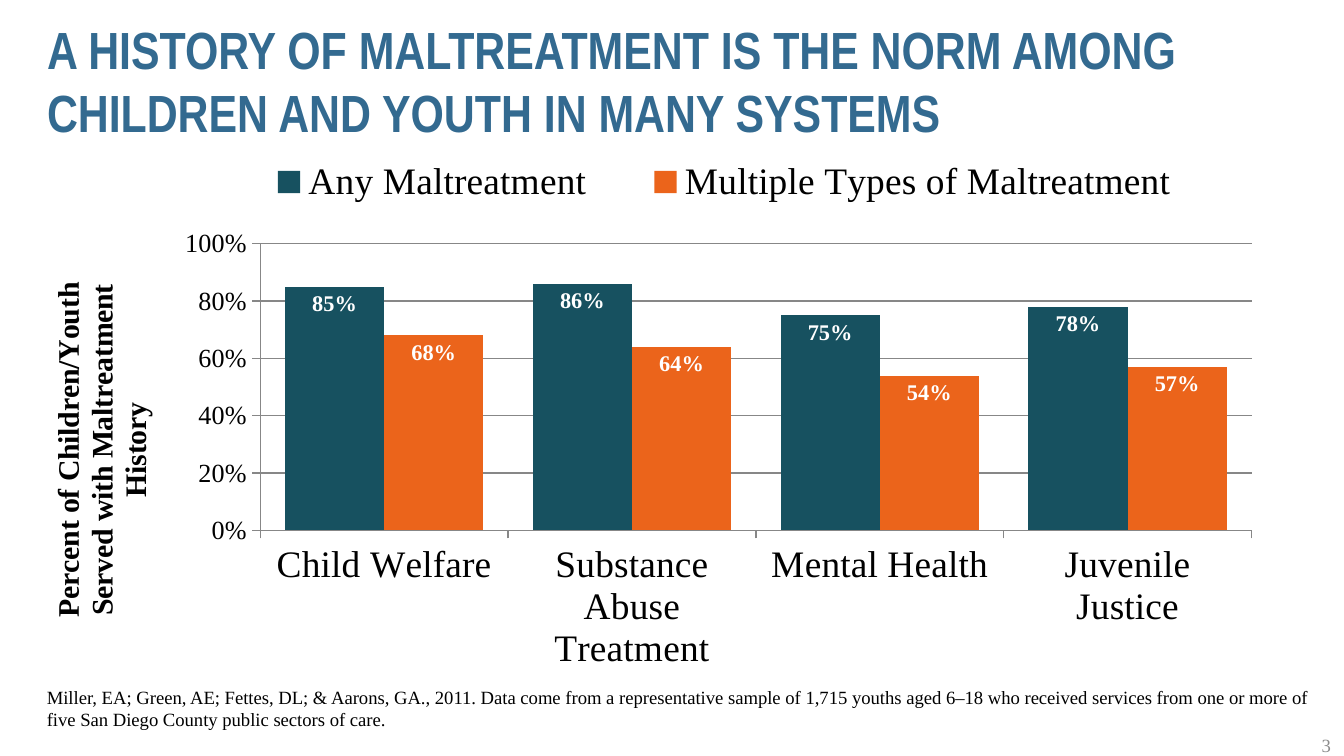
import dataclasses

import lxml.etree
import pptx
import pptx.chart.data
import pptx.dml.color
import pptx.enum.chart
import pptx.enum.text
import pptx.oxml.ns
import pptx.util

PX = 9525  # EMU in one px, at 96 px to the inch


@dataclasses.dataclass(frozen=True)
class Theme:
    heading_font: str = "Arial Narrow"
    body_font: str = "Times New Roman"
    heading: str = "336A90"
    ink: str = "000000"
    muted: str = "8C8C8C"
    grid: str = "878787"
    label: str = "FFFFFF"
    series: tuple = ("175160", "EB641B")
    title_size: int = 28
    category_size: int = 20
    axis_title_size: int = 16
    value_size: int = 14
    label_size: int = 12
    note_size: int = 10


THEME = Theme()

CATEGORIES = ["Child Welfare", "Substance Abuse Treatment", "Mental Health", "Juvenile Justice"]
RATES = {
    "Any Maltreatment": (0.85, 0.86, 0.75, 0.78),
    "Multiple Types of Maltreatment": (0.68, 0.64, 0.54, 0.57),
}


def emu(box):
    return [pptx.util.Emu(length * PX) for length in box]


def rgb(code):
    return pptx.dml.color.RGBColor.from_string(code)


def style_font(font, size, color=THEME.ink, name=THEME.body_font, bold=False):
    font.name = name
    font.size = pptx.util.Pt(size)
    font.bold = bold
    font.color.rgb = rgb(color)


def add_title(page, box, text):
    title = page.shapes.title
    title.left, title.top, title.width, title.height = emu(box)
    frame = title.text_frame
    frame.text = text
    frame.word_wrap = True
    frame.auto_size = pptx.enum.text.MSO_AUTO_SIZE.NONE
    frame.vertical_anchor = pptx.enum.text.MSO_ANCHOR.MIDDLE
    para = frame.paragraphs[0]
    para.alignment = pptx.enum.text.PP_ALIGN.LEFT
    style_font(para.runs[0].font, THEME.title_size, THEME.heading, THEME.heading_font, True)


def add_note(page, box, text, color=THEME.ink, align="LEFT", anchor="TOP"):
    frame = page.shapes.add_textbox(*emu(box)).text_frame
    frame.text = text
    frame.word_wrap = True
    frame.vertical_anchor = pptx.enum.text.MSO_ANCHOR[anchor]
    para = frame.paragraphs[0]
    para.alignment = pptx.enum.text.PP_ALIGN[align]
    style_font(para.runs[0].font, THEME.note_size, color)


def set_layout(element, index, chart_size, part_box, inner=False):
    """Fix a chart part at a px box (or point) inside the chart, as the child at index."""
    qn = pptx.oxml.ns.qn
    for old in element.findall(qn("c:layout")):
        element.remove(old)
    layout = lxml.etree.Element(qn("c:layout"))
    manual = lxml.etree.SubElement(layout, qn("c:manualLayout"))
    settings = {"layoutTarget": "inner"} if inner else {}
    settings.update(xMode="edge", yMode="edge")
    for tag, length, whole in zip("xywh", part_box, chart_size * 2):
        settings[tag] = length / whole
    for tag, value in settings.items():
        lxml.etree.SubElement(manual, qn("c:" + tag)).set("val", str(value))
    element.insert(index, layout)


def format_axes(chart, chart_size):
    categories, values = chart.category_axis, chart.value_axis
    for axis, size in ((categories, THEME.category_size), (values, THEME.value_size)):
        style_font(axis.tick_labels.font, size)
        axis.major_tick_mark = pptx.enum.chart.XL_TICK_MARK.OUTSIDE
        axis.minor_tick_mark = pptx.enum.chart.XL_TICK_MARK.NONE
        axis.format.line.color.rgb = rgb(THEME.grid)
    values.minimum_scale, values.maximum_scale, values.major_unit = 0, 1, 0.2
    values.tick_labels.number_format = "0%"
    values.tick_labels.number_format_is_linked = False
    values.has_major_gridlines = True
    values.major_gridlines.format.line.color.rgb = rgb(THEME.grid)
    frame = values.axis_title.text_frame
    frame.text = "Percent of Children/Youth Served with Maltreatment History"
    style_font(frame.paragraphs[0].runs[0].font, THEME.axis_title_size, bold=True)
    set_layout(values.axis_title._element, 1, chart_size, (15, 90))


def format_series(series, color):
    series.format.fill.solid()
    series.format.fill.fore_color.rgb = rgb(color)
    series.invert_if_negative = False
    labels = series.data_labels
    labels.show_value = True
    labels.position = pptx.enum.chart.XL_LABEL_POSITION.INSIDE_END
    labels.number_format = "0%"
    labels.number_format_is_linked = False
    style_font(labels.font, THEME.label_size, THEME.label, bold=True)


def add_rate_chart(page, box):
    chart_size = box[2:]
    data = pptx.chart.data.CategoryChartData(number_format="0%")
    data.categories = CATEGORIES
    for name, rates in RATES.items():
        data.add_series(name, rates)
    kind = pptx.enum.chart.XL_CHART_TYPE.COLUMN_CLUSTERED
    chart = page.shapes.add_chart(kind, *emu(box), data).chart
    chart.has_title = False
    style_font(chart.font, THEME.note_size)
    plot = chart.plots[0]
    plot.gap_width, plot.overlap = 50, 0
    plot.vary_by_categories = False
    for series, color in zip(plot.series, THEME.series):
        format_series(series, color)
    format_axes(chart, chart_size)
    chart.has_legend = True
    chart.legend.position = pptx.enum.chart.XL_LEGEND_POSITION.TOP
    chart.legend.include_in_layout = False
    style_font(chart.legend.font, THEME.category_size)
    set_layout(chart.legend._element, 1, chart_size, (143, 3, 717, 38))
    plot_area = chart._chartSpace.chart.plotArea
    set_layout(plot_area, 0, chart_size, (170, 66, 708, 205), inner=True)


def main():
    deck = pptx.Presentation()
    deck.slide_width, deck.slide_height = emu((960, 540))
    page = deck.slides.add_slide(deck.slide_layouts[5])
    add_title(page, (24, 12, 904, 90),
              "A HISTORY OF MALTREATMENT IS THE NORM AMONG CHILDREN AND YOUTH IN MANY SYSTEMS")
    add_rate_chart(page, (16, 108, 896, 378))
    add_note(page, (24, 485, 920, 42),
             "Miller, EA; Green, AE; Fettes, DL; & Aarons, GA., 2011. Data come from a "
             "representative sample of 1,715 youths aged 6–18 who received services from "
             "one or more of five San Diego County public sectors of care.")
    add_note(page, (736, 518, 224, 29), "3", THEME.muted, "RIGHT", "MIDDLE")
    deck.save("out.pptx")


if __name__ == "__main__":
    main()
